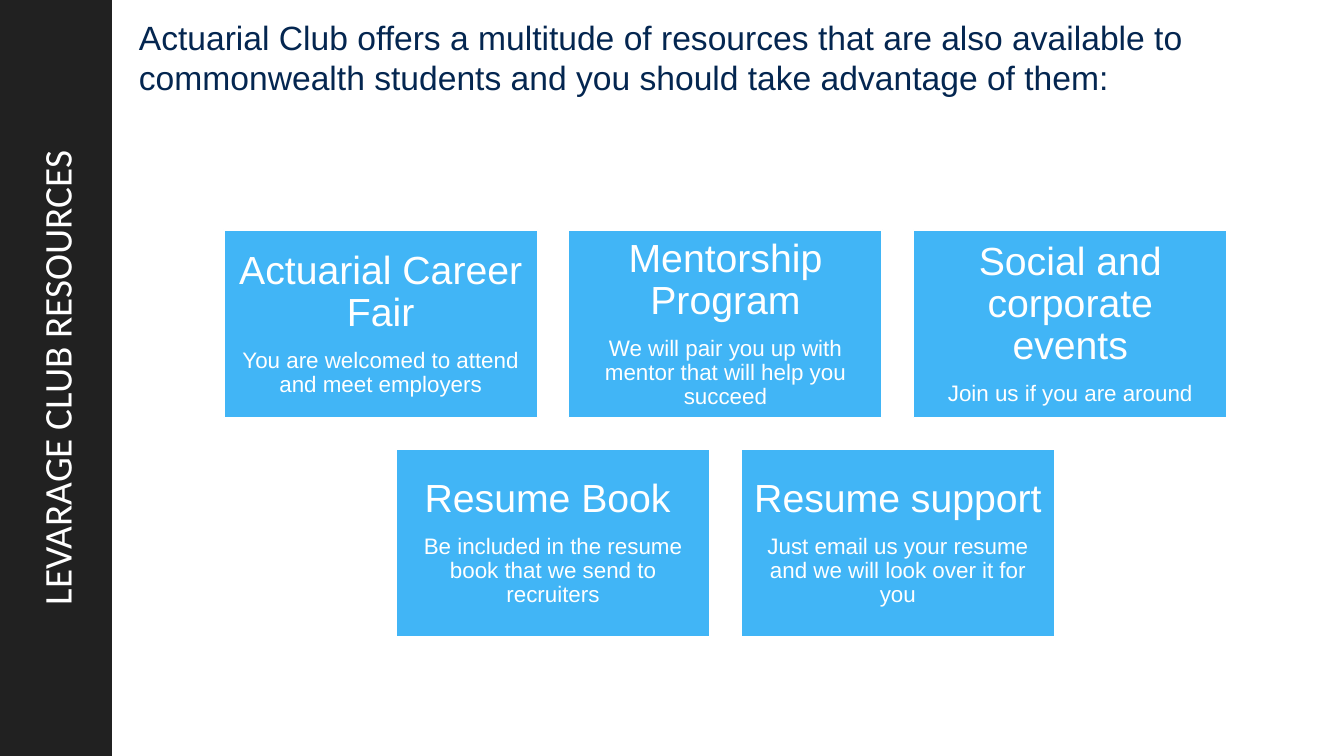
from dataclasses import dataclass

from pptx import Presentation
from pptx.dml.color import RGBColor
from pptx.enum.shapes import MSO_SHAPE as SHAPE
from pptx.enum.text import MSO_ANCHOR as ANCHOR, MSO_AUTO_SIZE as AUTO, PP_ALIGN as ALIGN
from pptx.util import Inches, Pt


@dataclass(frozen=True)
class Theme:
    dark: RGBColor = RGBColor.from_string("212121")
    navy: RGBColor = RGBColor.from_string("042650")
    blue: RGBColor = RGBColor.from_string("41B5F6")
    white: RGBColor = RGBColor.from_string("FFFFFF")
    title_font: str = "Calibri"
    body_font: str = "Arial"
    heading: int = 28
    intro: int = 24
    detail: int = 16


THEME = Theme()

TITLE = "LEVARAGE CLUB RESOURCES"
INTRO = ("Actuarial Club offers a multitude of resources that are also available to "
         "commonwealth students and you should take advantage of them:")
RESOURCE_ROWS = [
    [("Actuarial Career Fair", "You are welcomed to attend and meet employers"),
     ("Mentorship Program", "We will pair you up with mentor that will help you succeed"),
     ("Social and corporate events", "Join us if you are around")],
    [("Resume Book ", "Be included in the resume book that we send to recruiters"),
     ("Resume support ", "Just email us your resume and we will look over it for you")],
]


def style(p, size, color, font=THEME.body_font, align=ALIGN.LEFT):
    p.alignment = align
    for r in p.runs:
        r.font.size = Pt(size)
        r.font.name = font
        r.font.color.rgb = color


def add_panel(s, x, y, w, h, fill):
    """Plain filled rectangle with vertically centred text."""
    sp = s.shapes.add_shape(SHAPE.RECTANGLE, *(Inches(v) for v in (x, y, w, h)))
    sp.shadow.inherit = False
    sp.fill.solid()
    sp.fill.fore_color.rgb = fill
    sp.line.fill.background()
    sp.text_frame.word_wrap = True
    sp.text_frame.vertical_anchor = ANCHOR.MIDDLE
    return sp


def add_sidebar(s, x, y, w, h):
    """Dark band with the title reading upwards."""
    tf = add_panel(s, x, y, w, h, THEME.dark).text_frame
    tf.text = TITLE
    # Only a plain shape turns its text reliably; title placeholders ignore vert
    tf._txBody.bodyPr.set("vert", "vert270")
    style(tf.paragraphs[0], THEME.heading, THEME.white, THEME.title_font, ALIGN.CENTER)


def add_intro(s, x, y, w, h):
    tf = s.shapes.add_textbox(*(Inches(v) for v in (x, y, w, h))).text_frame
    tf.word_wrap = True
    tf.auto_size = AUTO.SHAPE_TO_FIT_TEXT
    tf.text = INTRO
    style(tf.paragraphs[0], THEME.intro, THEME.navy)


def add_card(s, x, y, w, h, heading, detail):
    sp = add_panel(s, x, y, w, h, THEME.blue)
    sp.line.color.rgb = THEME.white
    sp.line.width = Pt(1)
    tf = sp.text_frame
    tf.margin_left = tf.margin_right = tf.margin_top = tf.margin_bottom = Inches(0.12)
    tf.text = heading
    tf.add_paragraph().text = detail
    for p, size in zip(tf.paragraphs, (THEME.heading, THEME.detail)):
        style(p, size, THEME.white, align=ALIGN.CENTER)
        p.line_spacing = 0.9
    tf.paragraphs[0].space_after = Pt(10)


def add_resources(s, x, y, w, h):
    """Rows of equal cards, each row centred in the box."""
    gap, card_w = 0.31, 3.11
    card_h = (h - gap * (len(RESOURCE_ROWS) - 1)) / len(RESOURCE_ROWS)
    for i, row in enumerate(RESOURCE_ROWS):
        row_w = len(row) * (card_w + gap) - gap
        left = x + (w - row_w) / 2
        for j, (heading, detail) in enumerate(row):
            add_card(s, left + j * (card_w + gap), y + i * (card_h + gap),
                     card_w, card_h, heading, detail)


def main():
    prs = Presentation()
    prs.slide_width, prs.slide_height = Inches(13.33), Inches(7.5)
    s = prs.slides.add_slide(prs.slide_layouts[6])
    add_sidebar(s, 0, 0, 1.11, 7.5)
    add_intro(s, 1.28, 0.12, 11.84, 0.91)
    add_resources(s, 2.22, 2.28, 9.95, 4.04)
    prs.save("out.pptx")


if __name__ == "__main__":
    main()
